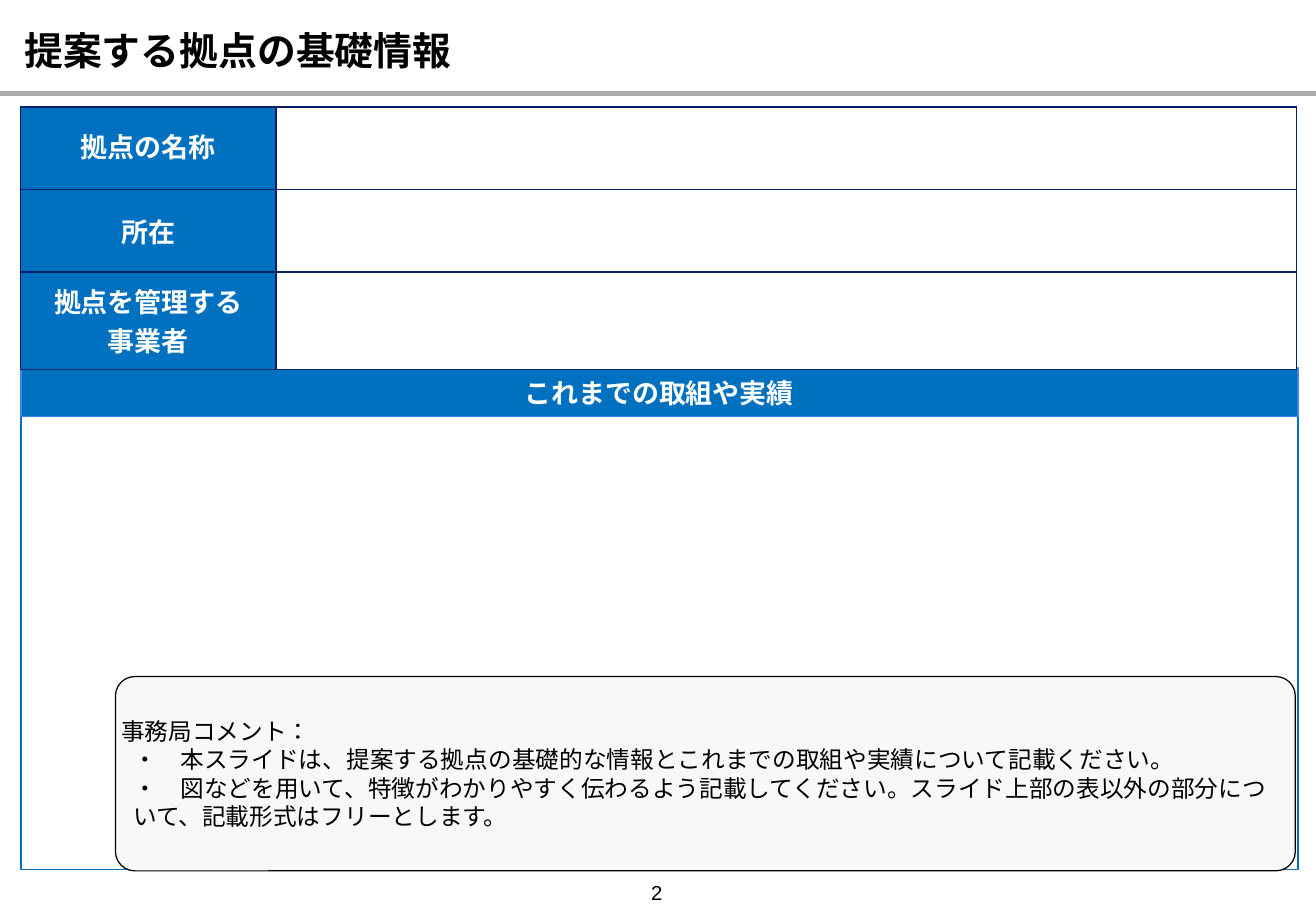
from dataclasses import dataclass

from lxml import etree
from pptx import Presentation
from pptx.dml.color import RGBColor
from pptx.enum.lang import MSO_LANGUAGE_ID
from pptx.enum.shapes import MSO_CONNECTOR, MSO_SHAPE
from pptx.enum.text import MSO_ANCHOR, PP_ALIGN
from pptx.oxml.ns import qn
from pptx.util import Inches, Pt

LEFT, CENTER = PP_ALIGN.LEFT, PP_ALIGN.CENTER
MIDDLE = MSO_ANCHOR.MIDDLE
RECTANGLE, ROUNDED = MSO_SHAPE.RECTANGLE, MSO_SHAPE.ROUNDED_RECTANGLE
STRAIGHT = MSO_CONNECTOR.STRAIGHT
JAPANESE = MSO_LANGUAGE_ID.JAPANESE
SLIDE_WIDTH, SLIDE_HEIGHT = 10.83, 7.5


@dataclass(frozen=True)
class Theme:
    black: str = "000000"
    white: str = "FFFFFF"
    blue: str = "0070C0"
    bright_blue: str = "3C82F5"
    navy: str = "092167"
    rule_gray: str = "ACACAC"
    comment_fill: str = "F6F8FA"
    latin: str = "Arial"
    japanese: str = "Noto Sans CJK JP"
    title_size: float = 23
    label_size: float = 16
    comment_size: float = 14
    number_size: float = 12


THEME = Theme()

TITLE = "提案する拠点の基礎情報"
PAGE_NUMBER = "2"
BASIC_ITEMS = ["拠点の名称", "所在", "拠点を管理する\n事業者"]
RESULTS_HEADING = "これまでの取組や実績"
COMMENT = [
    "事務局コメント：",
    "・　本スライドは、提案する拠点の基礎的な情報とこれまでの取組や実績について記載ください。",
    "・　図などを用いて、特徴がわかりやすく伝わるよう記載してください。"
    "スライド上部の表以外の部分について、記載形式はフリーとします。",
]


def rgb(color):
    return RGBColor.from_string(color)


def inches(box):
    return [Inches(length) for length in box]


def write(frame, text, size, color, font, bold=False, align=LEFT):
    frame.text = text
    for paragraph in frame.paragraphs:
        paragraph.alignment = align
        for run in paragraph.runs:
            run.font.size = Pt(size)
            run.font.bold = bold
            run.font.name = font
            run.font.language_id = JAPANESE
            run.font.color.rgb = rgb(color)
            east_asian = etree.SubElement(run._r.get_or_add_rPr(), qn("a:ea"))
            east_asian.set("typeface", font)


def set_margins(target, left, top, right, bottom):
    """Set the inner margins of a text frame or a table cell."""
    target.margin_left, target.margin_top = Inches(left), Inches(top)
    target.margin_right, target.margin_bottom = Inches(right), Inches(bottom)


def indent(paragraph, length):
    properties = paragraph._p.get_or_add_pPr()
    properties.set("marL", str(Inches(length)))
    properties.set("indent", "0")


def add_text_box(slide, box, left_margin=0.1):
    frame = slide.shapes.add_textbox(*inches(box)).text_frame
    frame.word_wrap = True
    frame.vertical_anchor = MIDDLE
    set_margins(frame, left_margin, 0.05, 0.1, 0.05)
    return frame


def add_panel(shapes, preset, box, fill, line, line_width):
    panel = shapes.add_shape(preset, *inches(box))
    panel.shadow.inherit = False
    panel.fill.solid()
    panel.fill.fore_color.rgb = rgb(fill)
    panel.line.color.rgb = rgb(line)
    panel.line.width = Pt(line_width)
    panel.text_frame.word_wrap = True
    panel.text_frame.vertical_anchor = MIDDLE
    set_margins(panel.text_frame, 0, 0, 0, 0)
    return panel


def add_header(slide, box):
    """Place the slide title with the gray rule just below it."""
    left, top, width, height = box
    title = add_text_box(slide, box, left_margin=0)
    write(title, TITLE, THEME.title_size, THEME.black, THEME.latin, bold=True)
    indent(title.paragraphs[0], 0.2)
    rule_y = top + height + 0.03
    rule = slide.shapes.add_connector(
        STRAIGHT, *inches((left - 0.02, rule_y, left + width + 0.02, rule_y)))
    rule.line.color.rgb = rgb(THEME.rule_gray)
    rule.line.width = Pt(3)
    etree.SubElement(rule._element.spPr, qn("a:effectLst"))


def add_page_number(slide, box):
    write(add_text_box(slide, box), PAGE_NUMBER, THEME.number_size,
          THEME.black, THEME.latin, align=CENTER)


def add_results(slide, box):
    """Place the free-form area under its heading band."""
    left, top, width, height = box
    group = slide.shapes.add_group_shape()
    area_top = 0.29
    add_panel(group.shapes, RECTANGLE,
              (left, top + area_top, width, height - area_top),
              THEME.white, THEME.blue, 1)
    heading = add_panel(group.shapes, RECTANGLE, (left, top, width, 0.4),
                        THEME.blue, THEME.bright_blue, 1)
    write(heading.text_frame, RESULTS_HEADING, THEME.label_size, THEME.white,
          THEME.japanese, bold=True, align=CENTER)


def add_comment(slide, box):
    comment = add_panel(slide.shapes, ROUNDED, box,
                        THEME.comment_fill, THEME.black, 0.75)
    comment.adjustments[0] = 0.1
    frame = comment.text_frame
    write(frame, "\n".join(COMMENT), THEME.comment_size, THEME.black, THEME.latin)
    for point in frame.paragraphs[1:]:
        indent(point, 0.1)


def set_borders(cell, color, width):
    properties = cell._tc.get_or_add_tcPr()
    for position, side in enumerate(("a:lnL", "a:lnR", "a:lnT", "a:lnB")):
        border = etree.Element(qn(side), w=str(Pt(width)))
        fill = etree.SubElement(border, qn("a:solidFill"))
        etree.SubElement(fill, qn("a:srgbClr"), val=color)
        properties.insert(position, border)


def add_basic_table(slide, box, column_widths, row_heights):
    table = slide.shapes.add_table(
        len(row_heights), len(column_widths), *inches(box)).table
    for column, width in zip(table.columns, column_widths):
        column.width = Inches(width)
    for row, height, item in zip(table.rows, row_heights, BASIC_ITEMS):
        row.height = Inches(height)
        label, entry = row.cells
        for cell, fill in ((label, THEME.blue), (entry, THEME.white)):
            cell.fill.solid()
            cell.fill.fore_color.rgb = rgb(fill)
            cell.vertical_anchor = MIDDLE
            set_margins(cell, 0.08, 0.08, 0.08, 0.08)
            set_borders(cell, THEME.navy, 1)
        write(label.text_frame, item, THEME.label_size, THEME.white,
              THEME.japanese, bold=True, align=CENTER)
    table.cell(0, 0).margin_top = Inches(0.04)


def build_basic_information(presentation):
    slide = presentation.slides.add_slide(presentation.slide_layouts[6])
    add_page_number(slide, (5.15, 7.21, 0.51, 0.28))
    add_header(slide, (0, 0.08, SLIDE_WIDTH, 0.66))
    add_results(slide, (0.17, 3.03, 10.51, 4.13))
    add_comment(slide, (0.95, 5.57, 9.71, 1.6))
    add_basic_table(slide, (0.17, 0.88, 10.5, 2.16), (2.1, 8.4), (0.68, 0.68, 0.8))


def main():
    presentation = Presentation()
    presentation.slide_width = Inches(SLIDE_WIDTH)
    presentation.slide_height = Inches(SLIDE_HEIGHT)
    build_basic_information(presentation)
    presentation.save("out.pptx")


if __name__ == "__main__":
    main()
